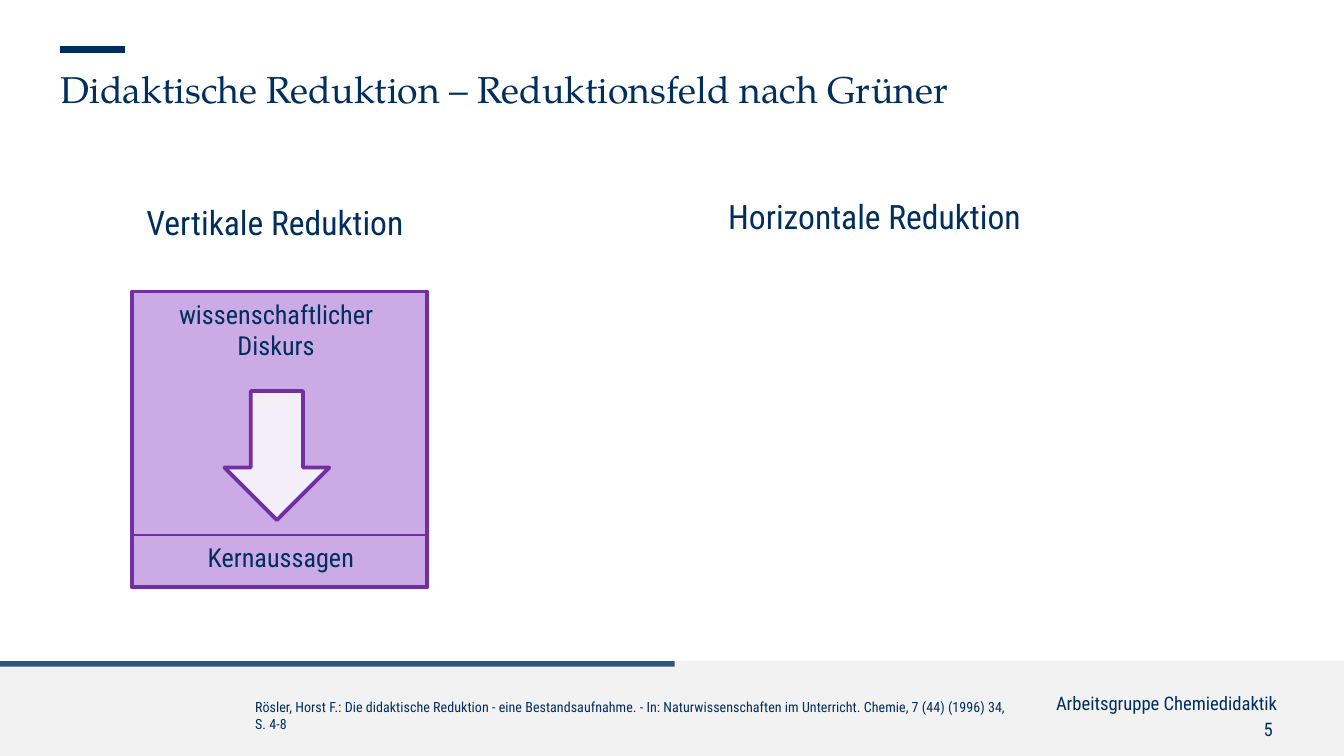
from dataclasses import dataclass

from lxml import etree
from pptx import Presentation
from pptx.dml.color import RGBColor
from pptx.enum.shapes import MSO_CONNECTOR, MSO_SHAPE
from pptx.enum.text import PP_ALIGN
from pptx.oxml.ns import qn
from pptx.util import Inches, Pt

RECTANGLE = MSO_SHAPE.RECTANGLE
RIGHT_ARROW = MSO_SHAPE.RIGHT_ARROW
STRAIGHT = MSO_CONNECTOR.STRAIGHT
LEFT, CENTER, RIGHT = PP_ALIGN.LEFT, PP_ALIGN.CENTER, PP_ALIGN.RIGHT


@dataclass(frozen=True)
class Theme:
    """Colours, fonts and type sizes of the slide."""
    navy: str = "002F5D"
    purple: str = "7030A0"
    lilac: str = "BF95DF"
    grey: str = "F2F2F2"
    white: str = "FFFFFF"
    heading_font: str = "TeX Gyre Pagella"
    body_font: str = "Roboto Condensed"
    title: float = 20
    subtitle: float = 18
    label: float = 14
    footer: float = 10
    source: float = 7.5


THEME = Theme()


def add_text(shapes, box, lines, size, align=LEFT, font=THEME.body_font, inset=True):
    """Add a text box with one paragraph per line."""
    frame = shapes.add_textbox(*map(Inches, box)).text_frame
    frame.word_wrap = True
    if not inset:
        frame.margin_left = frame.margin_right = 0
        frame.margin_top = frame.margin_bottom = 0
    frame.text = "\n".join(lines)
    for paragraph in frame.paragraphs:
        paragraph.alignment = align
        paragraph.font.name = font
        paragraph.font.size = Pt(size)
        paragraph.font.color.rgb = RGBColor.from_string(THEME.navy)


def add_block(shapes, kind, box, fill, opacity=100, outline=None):
    """Add a filled shape, optionally translucent and outlined."""
    block = shapes.add_shape(kind, *map(Inches, box))
    block.shadow.inherit = False
    block.fill.solid()
    block.fill.fore_color.rgb = RGBColor.from_string(fill)
    if opacity < 100:
        color = block._element.spPr.find(qn("a:solidFill"))[0]
        etree.SubElement(color, qn("a:alpha")).set("val", str(opacity * 1000))
    if outline:
        block.line.color.rgb = RGBColor.from_string(outline)
        block.line.width = Pt(2)
    else:
        block.line.fill.background()
    return block


def add_rule(shapes, left, top, width, color, weight):
    """Add a horizontal line."""
    rule = shapes.add_connector(
        STRAIGHT, Inches(left), Inches(top), Inches(left + width), Inches(top))
    rule.line.color.rgb = RGBColor.from_string(color)
    rule.line.width = Pt(weight)
    etree.SubElement(rule._element.spPr, qn("a:effectLst"))


def add_header(shapes, left, top, width, title):
    """Place the accent rule and the title below it."""
    add_rule(shapes, left, top, 0.48, THEME.navy, 3.5)
    add_text(shapes, (left, top + 0.12, width, 0.34), [title], THEME.title,
             font=THEME.heading_font, inset=False)


def add_footer(shapes, left, top, width, height, group, number, source):
    """Place the footer band with source, working group and page number."""
    add_block(shapes, RECTANGLE, (left, top, width, height), THEME.grey)
    add_text(shapes, (left + 3.38, top + 0.18, 6.22, 0.16), [group],
             THEME.footer, RIGHT)
    add_block(shapes, RECTANGLE, (left, top, 5.02, 0.04), THEME.navy, 80)
    add_text(shapes, (left + 3.85, top + 0.42, 5.62, 0.17), [number],
             THEME.footer, RIGHT, inset=False)
    add_text(shapes, (left + 1.8, top + 0.23, 5.83, 0.44), [source], THEME.source)


def add_vertical_reduction(shapes, left, top, side, heading, start, result):
    """Place the heading and the square leading from start to result."""
    parts = shapes.add_group_shape().shapes
    divider = top + 1.81
    add_block(parts, RECTANGLE, (left, top, side, side), THEME.lilac, 80, THEME.purple)
    add_text(parts, (left + 0.01, top - 0.72, 2.92, 0.53), [heading], THEME.subtitle)
    add_text(parts, (left - 0.06, top, 2.27, 0.75), start, THEME.label, CENTER)
    add_text(parts, (left + 0.22, divider, 1.78, 0.44), [result], THEME.label, CENTER)
    add_rule(parts, left, divider, side, THEME.purple, 1)
    arrow = add_block(parts, RIGHT_ARROW, (left + 0.6, top + 0.83, 0.96, 0.78),
                      THEME.white, 80, THEME.purple)
    arrow.rotation = 90


def main():
    """Build and save the slide."""
    deck = Presentation()
    deck.slide_width = Inches(10)
    deck.slide_height = deck.slide_width * 9 // 16
    shapes = deck.slides.add_slide(deck.slide_layouts[6]).shapes
    add_footer(
        shapes, 0, 4.92, 10, 0.71, "Arbeitsgruppe Chemiedidaktik", "5",
        "Rösler, Horst F.: Die didaktische Reduktion - eine Bestandsaufnahme. - In: "
        "Naturwissenschaften im Unterricht. Chemie, 7 (44) (1996) 34, S. 4-8")
    add_header(shapes, 0.45, 0.37, 7,
               "Didaktische Reduktion – Reduktionsfeld nach Grüner")
    add_text(shapes, (5.32, 1.41, 3.14, 0.46), ["Horizontale Reduktion"], THEME.subtitle)
    add_vertical_reduction(shapes, 0.98, 2.17, 2.2, "Vertikale Reduktion",
                           ["wissenschaftlicher", "Diskurs"], "Kernaussagen")
    deck.save("out.pptx")


if __name__ == "__main__":
    main()
